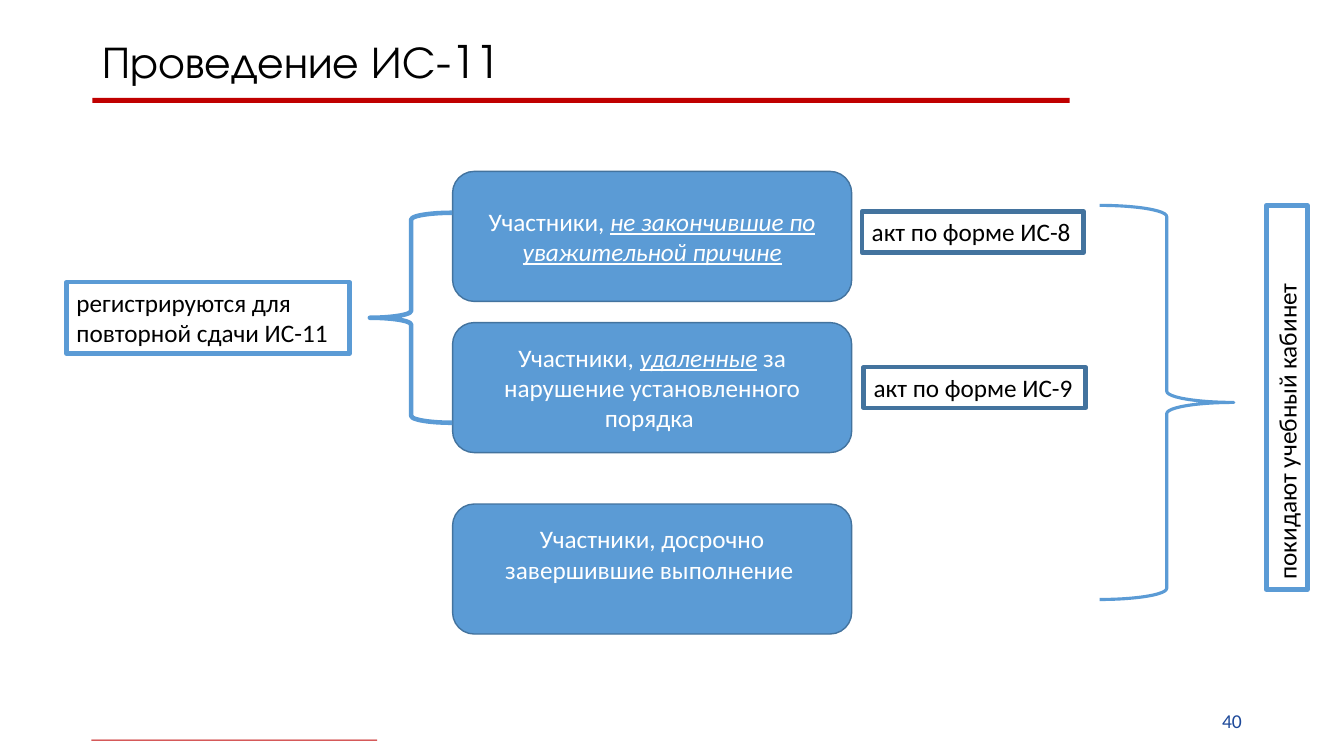
from pptx import Presentation
from pptx.dml.color import RGBColor
from pptx.enum.shapes import MSO_SHAPE
from pptx.enum.text import MSO_ANCHOR, MSO_AUTO_SIZE, PP_ALIGN
from pptx.util import Pt

RECTANGLE = MSO_SHAPE.RECTANGLE
ROUNDED = MSO_SHAPE.ROUNDED_RECTANGLE
LEFT_BRACE = MSO_SHAPE.LEFT_BRACE
RIGHT_BRACE = MSO_SHAPE.RIGHT_BRACE
MIDDLE = MSO_ANCHOR.MIDDLE
TOP = MSO_ANCHOR.TOP
LEFT = PP_ALIGN.LEFT
CENTER = PP_ALIGN.CENTER
RIGHT = PP_ALIGN.RIGHT
FIT_SHAPE = MSO_AUTO_SIZE.SHAPE_TO_FIT_TEXT

BLACK = RGBColor(0x00, 0x00, 0x00)
WHITE = RGBColor(0xFF, 0xFF, 0xFF)
RED = RGBColor(0xC0, 0x00, 0x00)
BLUE = RGBColor(0x5B, 0x9B, 0xD5)
DARK_BLUE = RGBColor(0x43, 0x73, 0x9E)
NUMBER_BLUE = RGBColor(0x1D, 0x49, 0x99)

BODY_FONT = "Calibri"
TITLE_FONT = "TeX Gyre Adventor"

# Top of each box, its text runs as (text, emphasised), and its bottom inset
PARTICIPANTS = [
    (122.4, [("Участники, ", False),
             ("не закончившие по уважительной причине", True)], 3.6),
    (230.4, [("Участники, ", False), ("удаленные", True),
             (" за нарушение установленного порядка ", False)], 3.6),
    (360, [("Участники, досрочно завершившие выполнение ", False)], 25.2),
]


def add_shape(slide, kind, box, fill=None, line=None, line_width=1):
    shape = slide.shapes.add_shape(kind, *(Pt(length) for length in box))
    shape.shadow.inherit = False
    if fill is None:
        shape.fill.background()
    else:
        shape.fill.solid()
        shape.fill.fore_color.rgb = fill
    if line is None:
        shape.line.fill.background()
    else:
        shape.line.color.rgb = line
        shape.line.width = Pt(line_width)
    return shape


def write(shape, runs, size=18, color=BLACK, font=BODY_FONT,
          align=LEFT, anchor=TOP, wrap=True):
    """Fill a shape with one paragraph; emphasised runs are italic underlined."""
    text_frame = shape.text_frame
    text_frame.word_wrap = wrap
    text_frame.vertical_anchor = anchor
    paragraph = text_frame.paragraphs[0]
    paragraph.alignment = align
    for text, emphasised in runs:
        run = paragraph.add_run()
        run.text = text
        run.font.name = font
        run.font.size = Pt(size)
        run.font.color.rgb = color
        if emphasised:
            run.font.italic = True
            run.font.underline = True


def add_text(slide, box, text, **style):
    text_box = slide.shapes.add_textbox(*(Pt(length) for length in box))
    write(text_box, [(text, False)], anchor=MIDDLE, **style)
    return text_box


def add_label(slide, box, text, line, line_width=3.25, wrap=True):
    label = add_shape(slide, RECTANGLE, box, line=line, line_width=line_width)
    write(label, [(text, False)], wrap=wrap)
    label.text_frame.auto_size = FIT_SHAPE
    return label


def add_participants(slide, top, runs, bottom_inset):
    box = add_shape(slide, ROUNDED, (323.3, top, 285.1, 92.9), BLUE, DARK_BLUE)
    write(box, runs, color=WHITE, align=CENTER, anchor=MIDDLE)
    box.text_frame.margin_bottom = Pt(bottom_inset)


def main():
    presentation = Presentation()
    presentation.slide_width = Pt(960)
    presentation.slide_height = Pt(540)
    slide = presentation.slides.add_slide(presentation.slide_layouts[6])

    add_shape(slide, RECTANGLE, (66, 70, 698, 3.6), RED)
    add_shape(slide, RECTANGLE, (65.3, 528.3, 204, 0.8), RED)
    add_text(slide, (678.2, 500.4, 216, 28.8), "40", size=14,
             color=NUMBER_BLUE, align=RIGHT)
    title = add_text(slide, (66.2, 17.3, 828, 56.9), "Проведение ИС-11",
                     size=32, font=TITLE_FONT)
    title.text_frame.paragraphs[0].line_spacing = 0.9

    for top, runs, bottom_inset in PARTICIPANTS:
        add_participants(slide, top, runs, bottom_inset)

    add_shape(slide, RIGHT_BRACE, (785.5, 146.7, 95.8, 281.5),
              line=BLUE, line_width=2.25)
    leaving = add_label(slide, (782, 269.3, 274.3, 29.1),
                        "покидают учебный кабинет", BLUE, 3.75)
    leaving.rotation = 270

    add_label(slide, (615.6, 151.2, 158.4, 29.1), "акт по форме ИС-8",
              DARK_BLUE, wrap=False)
    add_label(slide, (617, 262.3, 158.4, 29.1), "акт по форме ИС-9",
              DARK_BLUE, wrap=False)

    add_shape(slide, LEFT_BRACE, (264.2, 152, 59, 150),
              line=BLUE, line_width=3.25)
    add_label(slide, (47.5, 201.6, 202.3, 50.9),
              "регистрируются для повторной сдачи ИС-11", BLUE)

    presentation.save("out.pptx")


if __name__ == "__main__":
    main()
